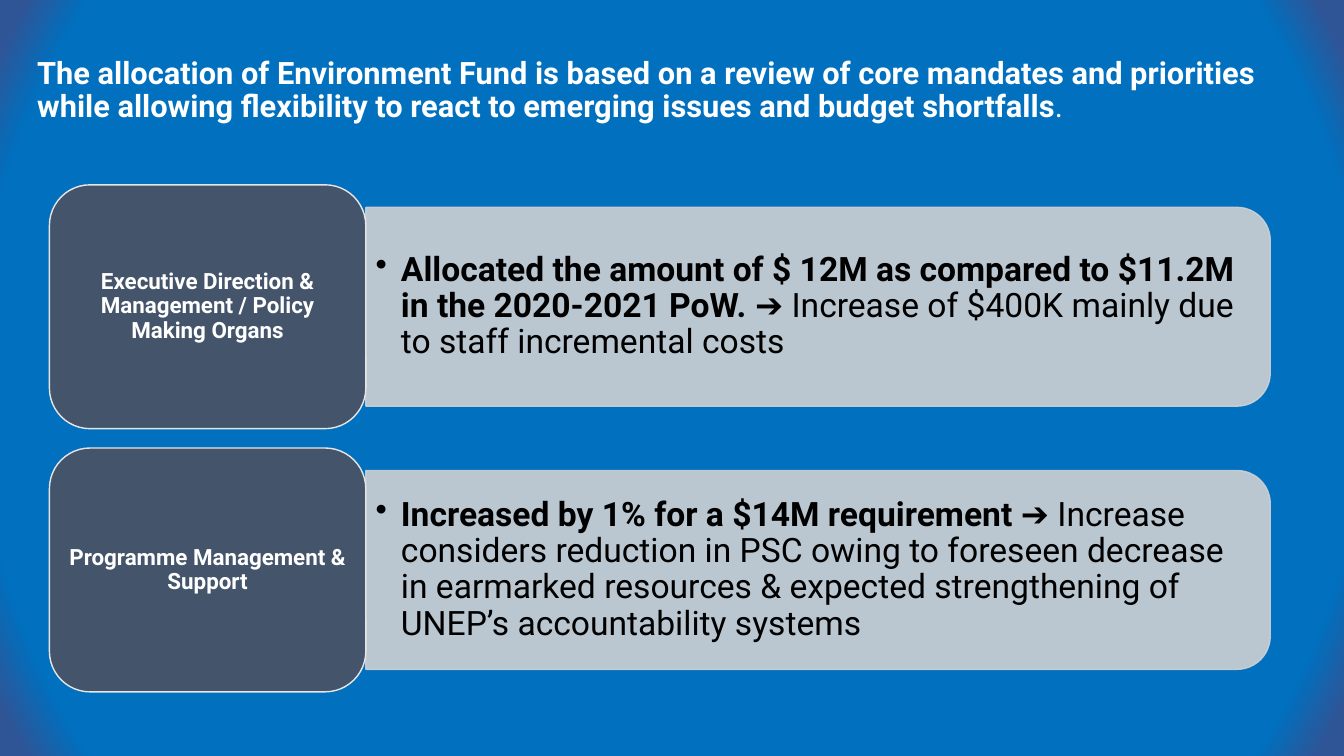
from lxml import etree
from pptx import Presentation
from pptx.dml.color import RGBColor
from pptx.enum.shapes import MSO_SHAPE
from pptx.enum.text import MSO_ANCHOR, MSO_AUTO_SIZE, PP_ALIGN
from pptx.oxml.ns import qn
from pptx.util import Pt

ROUNDED = MSO_SHAPE.ROUNDED_RECTANGLE
TOP_ROUNDED = MSO_SHAPE.ROUND_2_SAME_RECTANGLE
MIDDLE = MSO_ANCHOR.MIDDLE
NO_FIT = MSO_AUTO_SIZE.NONE
LEFT, CENTER = PP_ALIGN.LEFT, PP_ALIGN.CENTER

TITLE = [
    ("The allocation of Environment Fund is based on a review of core mandates and priorities "
     "while allowing flexibility to react to emerging issues and budget shortfalls", True),
    (".", False),
]
ALLOCATIONS = [
    ("Executive Direction & Management / Policy Making Organs",
     [("Allocated the amount of $ 12M as compared to $11.2M in the 2020-2021 PoW. ", True),
      ("➔ Increase of $400K mainly due to staff incremental costs", False)]),
    ("Programme Management & Support",
     [("Increased by 1% for a $14M requirement ", True),
      ("➔ Increase considers reduction in PSC owing to foreseen decrease in earmarked "
       "resources & expected strengthening of UNEP’s accountability systems", False)]),
]
FIRST_TOP, ROW_PITCH = 132, 188
LABEL_LEFT, LABEL_WIDTH, LABEL_HEIGHT = 35.3, 226, 174.2
PANEL_LEFT, PANEL_WIDTH, PANEL_HEIGHT = 261.3, 646, 142
TEXT_WIDTH, TEXT_HEIGHT = 639, 128


def color(value):
    """Turn a hex string into a colour."""
    return RGBColor.from_string(value)


def set_background(slide):
    """Give the slide a circular gradient that darkens at its corners."""
    fill = slide.background.fill
    fill.gradient()
    for stop, (position, value) in zip(fill.gradient_stops, [(0.9, "0070BF"), (0.97, "2F5597")]):
        stop.position = position
        stop.color.rgb = color(value)
    gradient = slide.element.find(".//" + qn("a:gradFill"))
    gradient.remove(gradient.find(qn("a:lin")))
    circle = etree.SubElement(gradient, qn("a:path"), path="circle")
    etree.SubElement(circle, qn("a:fillToRect"), l="50000", t="50000", r="50000", b="50000")


def write_text(frame, runs, size, text_color, alignment=LEFT, bullet=False, margins=(7.2, 3.6)):
    """Write one vertically centred paragraph of (text, bold) runs."""
    frame.word_wrap = True
    frame.auto_size = NO_FIT
    frame.vertical_anchor = MIDDLE
    frame.margin_left = frame.margin_right = Pt(margins[0])
    frame.margin_top = frame.margin_bottom = Pt(margins[1])
    paragraph = frame.paragraphs[0]
    paragraph.alignment = alignment
    paragraph.line_spacing = 0.9
    paragraph.space_before = Pt(0)
    if bullet:
        properties = paragraph._p.get_or_add_pPr()
        properties.set("marL", str(Pt(18)))
        properties.set("indent", str(-Pt(18)))
        etree.SubElement(properties, qn("a:buChar"), char="•")
    paragraph.font.name = "Roboto"
    paragraph.font.size = Pt(size)
    paragraph.font.color.rgb = color(text_color)
    for text, bold in runs:
        run = paragraph.add_run()
        run.text = text
        run.font.bold = bold


def add_box(slide, kind, left, top, width, height, fill_color, line_color):
    """Add a filled and outlined preset shape."""
    shape = slide.shapes.add_shape(kind, Pt(left), Pt(top), Pt(width), Pt(height))
    shape.shadow.inherit = False
    shape.fill.solid()
    shape.fill.fore_color.rgb = color(fill_color)
    shape.line.color.rgb = color(line_color)
    shape.line.width = Pt(1)
    return shape


def add_panel(slide, middle, runs):
    """Add a translucent panel rounded on its right, with its bullet text."""
    left = PANEL_LEFT + (PANEL_WIDTH - PANEL_HEIGHT) / 2
    panel = add_box(slide, TOP_ROUNDED, left, middle - PANEL_WIDTH / 2,
                    PANEL_HEIGHT, PANEL_WIDTH, "CFD1D4", "CFD1D4")
    panel.rotation = 90
    for rgb in panel._element.spPr.iter(qn("a:srgbClr")):
        etree.SubElement(rgb, qn("a:alpha"), val="90000")
    box = slide.shapes.add_textbox(Pt(PANEL_LEFT), Pt(middle - TEXT_HEIGHT / 2),
                                   Pt(TEXT_WIDTH), Pt(TEXT_HEIGHT))
    write_text(box.text_frame, runs, 24, "000000", bullet=True)


def add_label(slide, middle, text):
    """Add the dark rounded label at the left of a row."""
    label = add_box(slide, ROUNDED, LABEL_LEFT, middle - LABEL_HEIGHT / 2,
                    LABEL_WIDTH, LABEL_HEIGHT, "44546A", "E7E6E6")
    write_text(label.text_frame, [(text, True)], 16, "FFFFFF", CENTER, margins=(5, 2.2))


def set_title(slide):
    """Place and write the slide title."""
    title = slide.shapes.title
    title.left, title.top, title.width, title.height = Pt(19.4), Pt(25), Pt(919.4), Pt(80)
    write_text(title.text_frame, TITLE, 22, "FFFFFF")


def main():
    """Build and save the slide."""
    presentation = Presentation()
    presentation.slide_width, presentation.slide_height = Pt(960), Pt(540)
    slide = presentation.slides.add_slide(presentation.slide_layouts[5])
    set_background(slide)
    set_title(slide)
    for row, (label, runs) in enumerate(ALLOCATIONS):
        middle = FIRST_TOP + row * ROW_PITCH + LABEL_HEIGHT / 2
        add_panel(slide, middle, runs)
        add_label(slide, middle, label)
    presentation.save("out.pptx")


if __name__ == "__main__":
    main()
